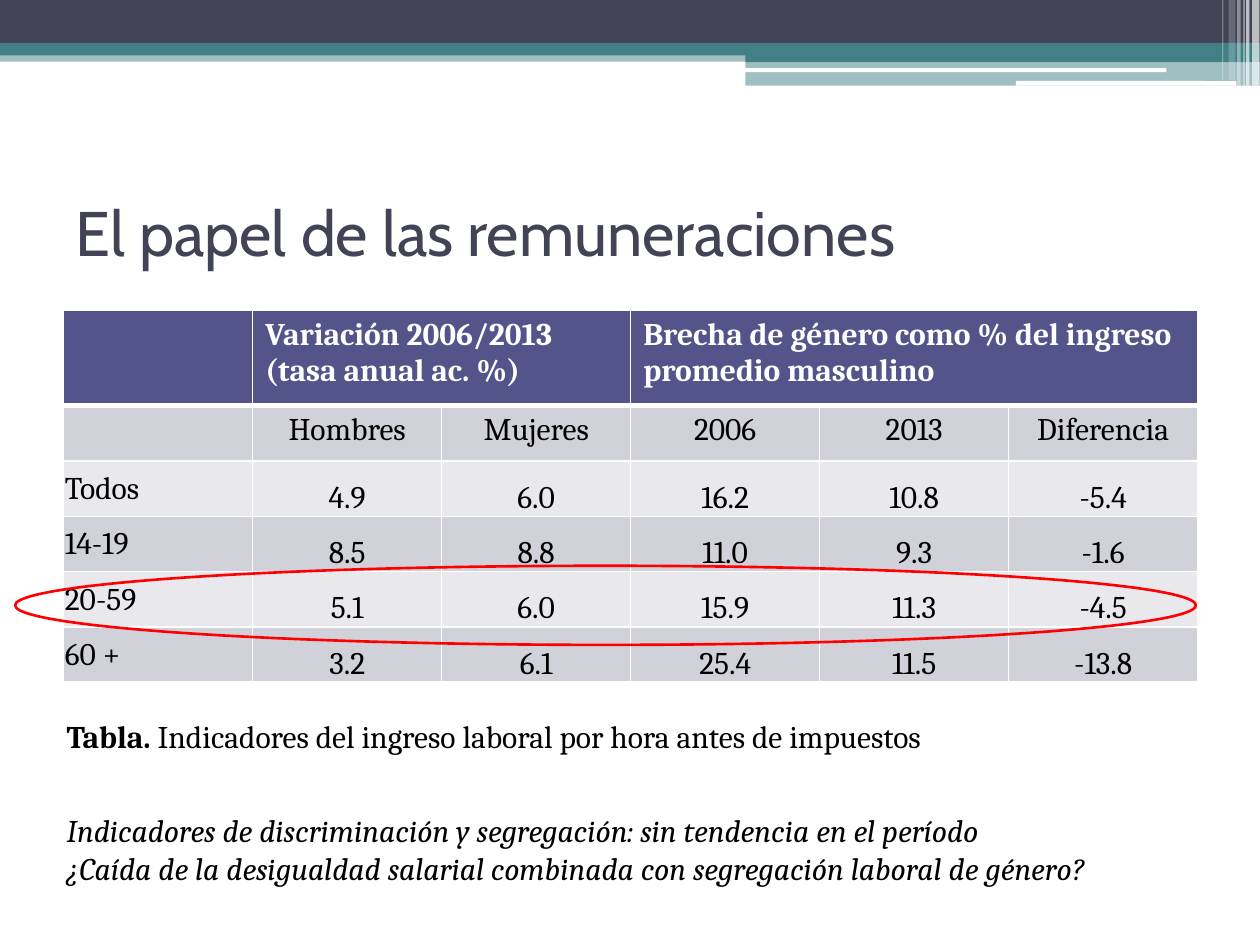
import pptx
import pptx.dml.color
import pptx.enum.shapes
import pptx.enum.text
import pptx.oxml
import pptx.oxml.ns
import pptx.util
from lxml import etree

Pt = pptx.util.Pt
SHAPES = pptx.enum.shapes.MSO_SHAPE
ALIGN = pptx.enum.text.PP_ALIGN
ANCHOR = pptx.enum.text.MSO_ANCHOR

THEME = {
    "white": "FFFFFF", "black": "000000", "slate": "424456", "teal": "438086",
    "header": "53548A", "bands": ("D1D1DA", "E9E9ED"), "highlight": "FF0000",
    "title_font": "Cabin", "body_font": "Cambria", "title_size": 36, "body_size": 18,
}

TITLE = "El papel de las remuneraciones"
HEADINGS = [
    (1, 2, ["Variación 2006/2013", "(tasa anual ac. %)"]),
    (3, 5, ["Brecha de género como % del ingreso promedio masculino"]),
]
COLUMNS = ["", "Hombres", "Mujeres", "2006", "2013", "Diferencia"]
INCOME = [
    ["Todos", "4.9", "6.0", "16.2", "10.8", "-5.4"],
    ["14-19", "8.5", "8.8", "11.0", "9.3", "-1.6"],
    ["20-59", "5.1", "6.0", "15.9", "11.3", "-4.5"],
    ["60 +", "3.2", "6.1", "25.4", "11.5", "-13.8"],
]
CAPTION = ("Tabla. ", "Indicadores del ingreso laboral por hora antes de impuestos")
CONCLUSIONS = [
    "Indicadores de discriminación y segregación: sin tendencia en el período",
    "¿Caída de la desigualdad salarial combinada con segregación laboral de género?",
]

BANNER = [
    (0, 28.8, 720, 6.5, "teal", 50),
    (0, 0, 720, 24.5, "slate", 100),
    (0, 24.5, 720, 7.2, "teal", 100),
    (426, 28.3, 294, 7.2, "teal", 100),
    (426, 34.8, 294, 14.1, "teal", 50),
]
BANNER_GAPS = [(425.5, 39, 241, 2.2), (580.5, 46.3, 126, 2.7)]
BANNER_STRIPES = [
    (715.5, 4.2, 49, 65), (712, 2, 49, 65), (710.5, 0.7, 49, 60), (707, 2, 49, 40),
    (702, 4, 46, 20), (698.4, 0.7, 46, 30),
]

TABLE_LEFT, TABLE_TOP = 36.4, 177.4
COLUMN_WIDTH, HEADING_HEIGHT, ROW_HEIGHT = 108, 54.5, 31.6
CELL_INSET = 0.7


def rgb(value):
    return pptx.dml.color.RGBColor.from_string(value)


def add_block(slide, kind, box, color=None, opacity=100):
    block = slide.shapes.add_shape(kind, *map(Pt, box))
    block.shadow.inherit = False
    if color is None:
        block.fill.background()
        return block
    block.line.fill.background()
    block.fill.solid()
    block.fill.fore_color.rgb = rgb(color)
    if opacity < 100:
        fill = block.fill._xPr.find(pptx.oxml.ns.qn("a:solidFill"))
        etree.SubElement(fill[0], pptx.oxml.ns.qn("a:alpha"), val=str(opacity * 1000))
    return block


def style(paragraph, color="black", font="body", bold=None, italic=None):
    paragraph.font.name = THEME[font + "_font"]
    paragraph.font.size = Pt(THEME[font + "_size"])
    paragraph.font.color.rgb = rgb(THEME[color])
    paragraph.font.bold = bold
    paragraph.font.italic = italic


def write(frame, lines, align=ALIGN.LEFT, **look):
    frame.word_wrap = True
    frame.text = "\n".join(lines)
    for paragraph in frame.paragraphs:
        paragraph.alignment = align
        style(paragraph, **look)


def add_text(slide, box, lines, **look):
    frame = slide.shapes.add_textbox(*map(Pt, box)).text_frame
    write(frame, lines, **look)
    return frame


def paint_cell(cell, color, top=1, bottom=1):
    properties = cell._tc.get_or_add_tcPr()
    for side, width in (("L", 1), ("R", 1), ("T", top), ("B", bottom)):
        properties.append(pptx.oxml.parse_xml(
            f'<a:ln{side} {pptx.oxml.ns.nsdecls("a")} w="{Pt(width)}"><a:solidFill>'
            f'<a:srgbClr val="{THEME["white"]}"/></a:solidFill></a:ln{side}>'))
    cell.fill.solid()
    cell.fill.fore_color.rgb = rgb(color)


def add_banner(slide):
    for *box, color, opacity in BANNER:
        add_block(slide, SHAPES.RECTANGLE, box, THEME[color], opacity)
    for box in BANNER_GAPS:
        add_block(slide, SHAPES.ROUNDED_RECTANGLE, box, THEME["white"])
    for left, width, height, opacity in BANNER_STRIPES:
        add_block(slide, SHAPES.RECTANGLE, (left, 0, width, height), THEME["white"], opacity)


def add_income_table(slide):
    body = [COLUMNS] + INCOME
    width = COLUMN_WIDTH * len(COLUMNS)
    height = HEADING_HEIGHT + ROW_HEIGHT * len(body)
    table = slide.shapes.add_table(
        len(body) + 1, len(COLUMNS), *map(Pt, (TABLE_LEFT, TABLE_TOP, width, height))).table
    for column in table.columns:
        column.width = Pt(COLUMN_WIDTH)
    for index, row in enumerate(table.rows):
        row.height = Pt(ROW_HEIGHT if index else HEADING_HEIGHT)
    for column in range(len(COLUMNS)):
        paint_cell(table.cell(0, column), THEME["header"], bottom=3)
    for first, last, lines in HEADINGS:
        table.cell(0, first).merge(table.cell(0, last))
        write(table.cell(0, first).text_frame, lines, color="white", bold=True)
    for r, values in enumerate(body):
        for c, value in enumerate(values):
            cell = table.cell(r + 1, c)
            paint_cell(cell, THEME["bands"][r % 2], top=1 if r else 3)
            write(cell.text_frame, [value], ALIGN.CENTER if c else ALIGN.LEFT, bold=False)
            if r:
                cell.vertical_anchor = ANCHOR.BOTTOM if c else ANCHOR.MIDDLE
                cell.margin_left = cell.margin_right = cell.margin_top = Pt(CELL_INSET)
                cell.margin_bottom = 0


def main():
    deck = pptx.Presentation()
    deck.slide_width, deck.slide_height = Pt(720), Pt(540)
    slide = deck.slides.add_slide(deck.slide_layouts[6])
    add_banner(slide)
    title = add_text(slide, (36, 90, 648, 84), [TITLE], color="slate", font="title")
    title.vertical_anchor = ANCHOR.MIDDLE
    add_income_table(slide)

    highlight = add_block(slide, SHAPES.OVAL, (8.6, 323.3, 674.8, 45.2))
    highlight.line.color.rgb = rgb(THEME["highlight"])
    highlight.line.width = Pt(1.5)

    add_text(slide, (31, 460, 675, 51), CONCLUSIONS, italic=True)
    caption = add_text(slide, (31, 406, 675, 29), [""]).paragraphs[0]
    for part, bold in zip(CAPTION, (True, False)):
        run = caption.add_run()
        run.text = part
        run.font.bold = bold
    deck.save("out.pptx")


if __name__ == "__main__":
    main()
